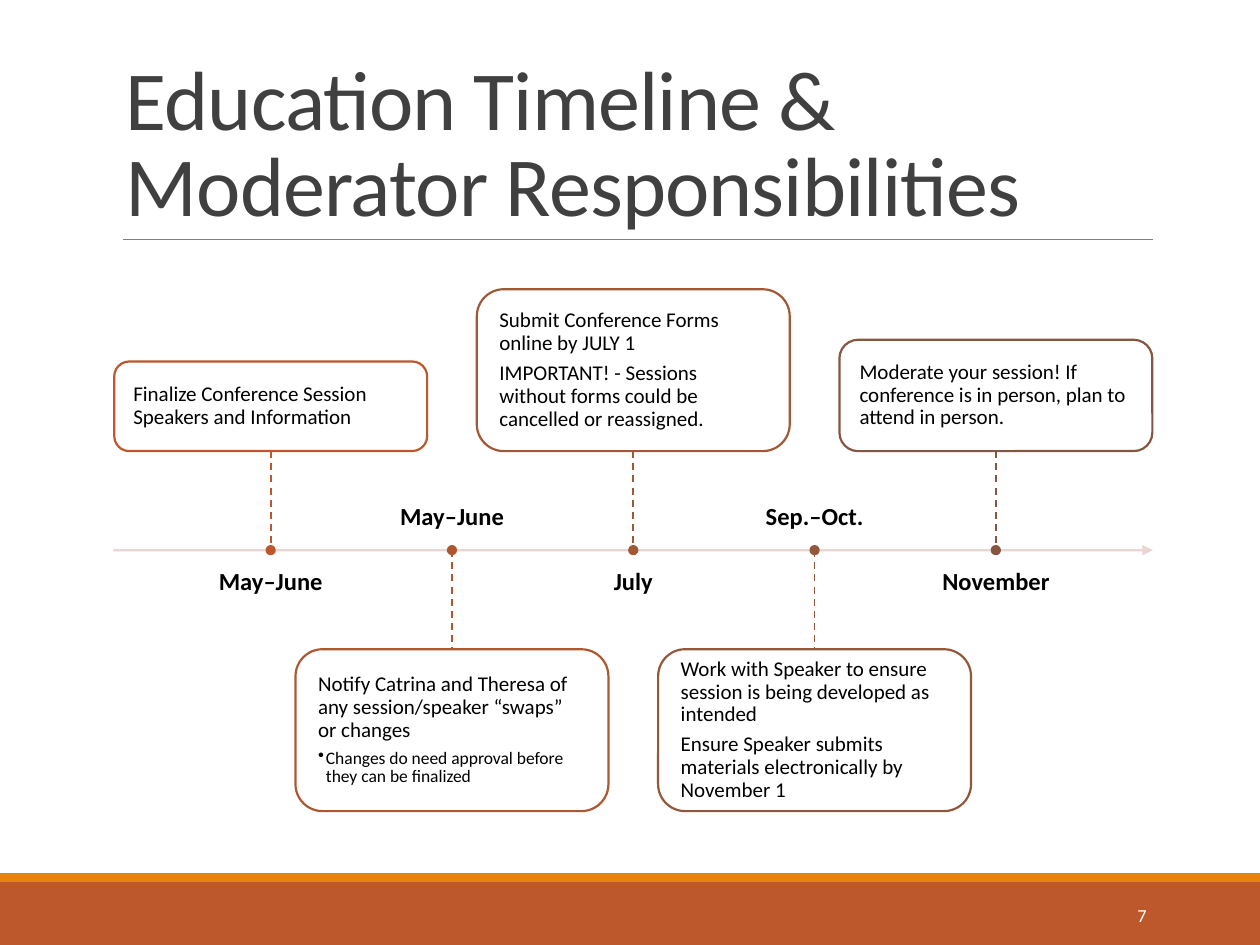
from pptx import Presentation
from pptx.dml.color import RGBColor
from pptx.enum.dml import MSO_LINE
from pptx.enum.shapes import MSO_CONNECTOR, MSO_SHAPE
from pptx.enum.text import MSO_ANCHOR, PP_ALIGN
from pptx.oxml.ns import qn
from pptx.oxml.xmlchemy import OxmlElement
from pptx.util import Pt

RECTANGLE, ROUNDED, OVAL = MSO_SHAPE.RECTANGLE, MSO_SHAPE.ROUNDED_RECTANGLE, MSO_SHAPE.OVAL
STRAIGHT, DASH = MSO_CONNECTOR.STRAIGHT, MSO_LINE.DASH
TOP, MIDDLE, BOTTOM = MSO_ANCHOR.TOP, MSO_ANCHOR.MIDDLE, MSO_ANCHOR.BOTTOM
LEFT, CENTER, RIGHT = PP_ALIGN.LEFT, PP_ALIGN.CENTER, PP_ALIGN.RIGHT

COLORS = {
    "footer": "BD582C", "stripe": "E48312", "rule": "808080", "axis": "E8D1CD",
    "title": "404040", "text": "000000", "white": "FFFFFF",
    "step1": "BD582C", "step2": "AE5832", "step3": "A05837", "step4": "93573C", "step5": "865640",
}
AXIS_Y, FIRST_X, STEP_X = 314.4, 154.7, 103.6
CARD_WIDTH, CARD_GAP = 178.8, 56.6
LABEL_WIDTH, LABEL_HEIGHT, LABEL_GAP = 157, 33.8, 11.2
DOT_SIZE = 4.6

MILESTONES = [
    ("May–June", 51.2, ["Finalize Conference Session Speakers and Information"], []),
    ("May–June", 92.5, ["Notify Catrina and Theresa of any session/speaker “swaps” or changes"],
     ["Changes do need approval before they can be finalized"]),
    ("July", 92.5, ["Submit Conference Forms online by JULY 1",
                    "IMPORTANT! - Sessions without forms could be cancelled or reassigned."], []),
    ("Sep.–Oct.", 92.5, ["Work with Speaker to ensure session is being developed as intended",
                         "Ensure Speaker submits materials electronically by November 1"], []),
    ("November", 63.6, ["Moderate your session! If conference is in person, plan to attend in person."], []),
]


class TimelineSlide:
    """Hold the style and the current slide of the timeline."""

    def __init__(self, presentation, font="Calibri"):
        self.slide = presentation.slides.add_slide(presentation.slide_layouts[6])
        self.font = font

    def color(self, name):
        return RGBColor.from_string(COLORS[name])

    def fade(self, parent, percent):
        alpha = OxmlElement("a:alpha")
        alpha.set("val", str(percent * 1000))
        parent.find(qn("a:solidFill"))[0].append(alpha)

    def shape(self, kind, left, top, width, height, fill, line=None):
        shape = self.slide.shapes.add_shape(kind, Pt(left), Pt(top), Pt(width), Pt(height))
        shape.shadow.inherit = False
        shape.fill.solid()
        shape.fill.fore_color.rgb = self.color(fill)
        if line:
            shape.line.color.rgb = self.color(line)
            shape.line.width = Pt(1.25)
        else:
            shape.line.fill.background()
        return shape

    def line(self, x1, y1, x2, y2, color, width, dash=None):
        connector = self.slide.shapes.add_connector(STRAIGHT, Pt(x1), Pt(y1), Pt(x2), Pt(y2))
        connector.line.color.rgb = self.color(color)
        connector.line.width = Pt(width)
        if dash:
            connector.line.dash_style = dash
        connector.element.spPr.append(OxmlElement("a:effectLst"))
        return connector

    def arrow(self, x1, x2, y):
        outline = self.line(x1, y, x2, y, "axis", 1.25).element.spPr.find(qn("a:ln"))
        self.fade(outline, 90)
        head = OxmlElement("a:tailEnd")
        head.set("type", "triangle")
        outline.append(head)

    def frame(self, shape, anchor, horizontal, vertical):
        frame = shape.text_frame
        frame.word_wrap = True
        frame.vertical_anchor = anchor
        frame.margin_left = frame.margin_right = Pt(horizontal)
        frame.margin_top = frame.margin_bottom = Pt(vertical)
        return frame

    def run(self, paragraph, text, size, color="text", bold=False):
        run = paragraph.add_run()
        run.text = text
        run.font.name = self.font
        run.font.size = Pt(size)
        run.font.bold = bold
        run.font.color.rgb = self.color(color)
        return run

    def text(self, left, top, width, height, lines, size, color="text", bold=False,
             anchor=TOP, align=LEFT, margins=(0, 0), line_spacing=0.9, tracking=0):
        box = self.slide.shapes.add_textbox(Pt(left), Pt(top), Pt(width), Pt(height))
        paragraph = self.frame(box, anchor, *margins).paragraphs[0]
        paragraph.alignment = align
        paragraph.line_spacing = line_spacing
        for index, line in enumerate(lines):
            if index:
                paragraph.add_line_break()
            run = self.run(paragraph, line, size, color, bold)
            if tracking:
                run.font.element.set("spc", str(tracking)) if hasattr(run.font, "element") else \
                    run._r.get_or_add_rPr().set("spc", str(tracking))

    def card(self, center, top, height, color, texts, bullets):
        card = self.shape(ROUNDED, center - CARD_WIDTH / 2, top, CARD_WIDTH, height, "white", color)
        self.fade(card.element.spPr, 90)
        frame = self.frame(card, MIDDLE, 8.4, 8.4)
        for index, text in enumerate(texts + bullets):
            paragraph = frame.add_paragraph() if index else frame.paragraphs[0]
            paragraph.alignment = LEFT
            paragraph.line_spacing = 0.9
            is_bullet = index >= len(texts)
            paragraph.space_after = Pt(1.5 if is_bullet else 4.2)
            self.run(paragraph, text, 10 if is_bullet else 12)
            if is_bullet:
                self.bullet(paragraph)

    def bullet(self, paragraph):
        properties = paragraph._p.get_or_add_pPr()
        properties.set("marL", str(Pt(4.5)))
        properties.set("indent", str(Pt(-4.5)))
        mark = OxmlElement("a:buChar")
        mark.set("char", "•")
        properties.append(mark)

    def milestone(self, index, label, height, texts, bullets):
        center = FIRST_X + index * STEP_X
        color = f"step{index + 1}"
        above = index % 2 == 0
        edge = AXIS_Y - CARD_GAP if above else AXIS_Y + CARD_GAP
        label_top = AXIS_Y + LABEL_GAP if above else AXIS_Y - LABEL_GAP - LABEL_HEIGHT
        self.text(center - LABEL_WIDTH / 2, label_top, LABEL_WIDTH, LABEL_HEIGHT, [label], 14,
                  bold=True, anchor=TOP if above else BOTTOM, align=CENTER)
        self.card(center, edge - height if above else edge, height, color, texts, bullets)
        self.line(center, min(edge, AXIS_Y), center, max(edge, AXIS_Y), color, 1, DASH)
        self.shape(OVAL, center - DOT_SIZE / 2, AXIS_Y - DOT_SIZE / 2, DOT_SIZE, DOT_SIZE, color, color)


def main():
    presentation = Presentation()
    presentation.slide_width, presentation.slide_height = Pt(720), Pt(540)
    timeline = TimelineSlide(presentation)
    timeline.shape(RECTANGLE, 0, 504, 720, 36, "footer")
    timeline.shape(RECTANGLE, 0, 499, 720, 5, "stripe")
    timeline.line(70.5, 136.8, 658.8, 136.8, "rule", 0.5)
    timeline.text(64.8, 22.5, 594, 114.3, ["Education Timeline & ", "Moderator Responsibilities"], 48,
                  "title", anchor=BOTTOM, margins=(7.2, 3.6), line_spacing=0.85, tracking=-50)
    timeline.text(584.6, 508.6, 77.7, 28.8, ["7"], 10.5, "white", anchor=MIDDLE, align=RIGHT,
                  margins=(7.2, 3.6), line_spacing=1)
    timeline.arrow(64.8, 658.8, AXIS_Y)
    for index, milestone in enumerate(MILESTONES):
        timeline.milestone(index, *milestone)
    presentation.save("out.pptx")


if __name__ == "__main__":
    main()
